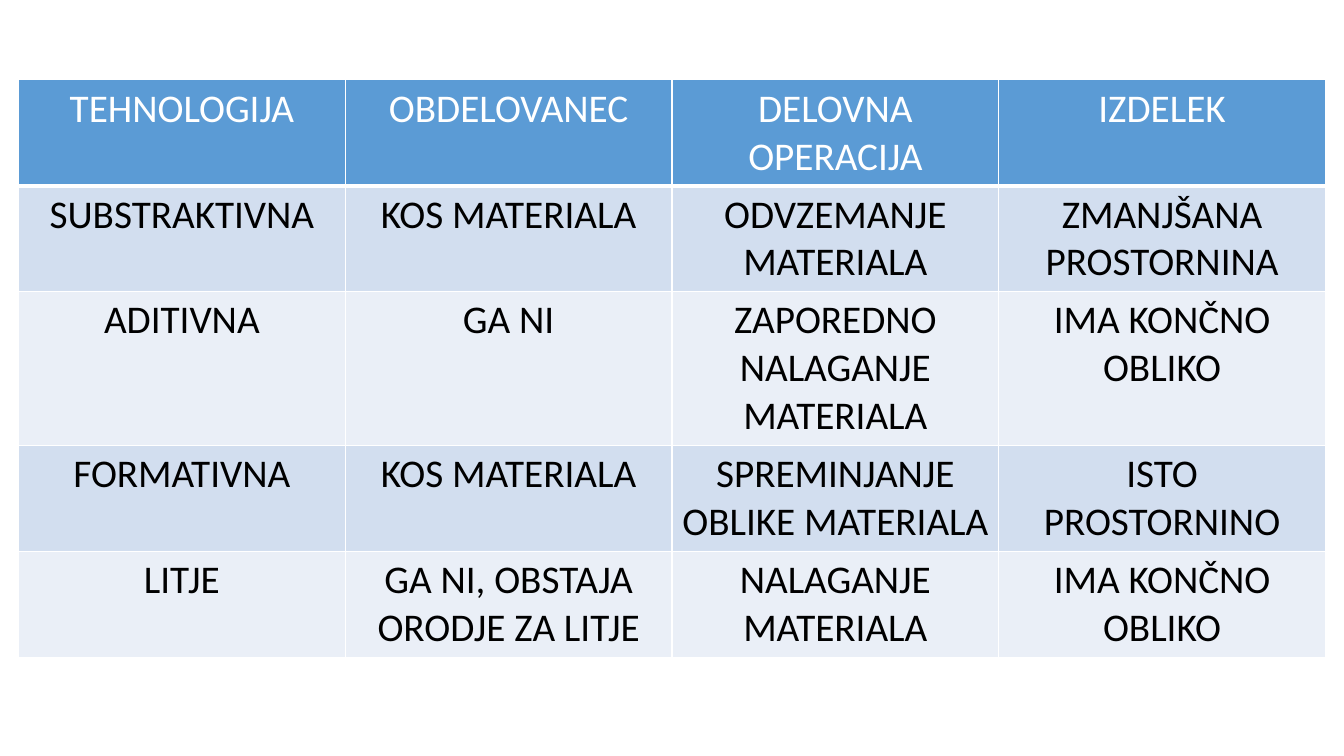
from lxml.etree import SubElement
from pptx import Presentation
from pptx.dml.color import RGBColor
from pptx.enum.text import PP_ALIGN
from pptx.oxml.ns import qn
from pptx.util import Pt

WHITE = RGBColor(0xFF, 0xFF, 0xFF)
BLACK = RGBColor(0x00, 0x00, 0x00)
HEADER_BLUE = RGBColor(0x5B, 0x9B, 0xD5)
BANDS = (RGBColor(0xD2, 0xDE, 0xEF), RGBColor(0xEA, 0xEF, 0xF7))

TECHNOLOGIES = [
    ("TEHNOLOGIJA", "OBDELOVANEC", "DELOVNA OPERACIJA", "IZDELEK"),
    ("SUBSTRAKTIVNA", "KOS MATERIALA", "ODVZEMANJE MATERIALA", "ZMANJŠANA PROSTORNINA"),
    ("ADITIVNA", "GA NI", "ZAPOREDNO NALAGANJE MATERIALA", "IMA KONČNO OBLIKO"),
    ("FORMATIVNA", "KOS MATERIALA", "SPREMINJANJE OBLIKE MATERIALA", "ISTO PROSTORNINO"),
    ("LITJE", "GA NI, OBSTAJA ORODJE ZA LITJE", "NALAGANJE MATERIALA", "IMA KONČNO OBLIKO"),
]
ROW_HEIGHTS = (75.5, 75.5, 109.7, 75.5, 75.5)


def add_borders(cell, widths):
    """Draw white borders; widths maps an edge letter (L, R, T, B) to points."""
    properties = cell._tc.get_or_add_tcPr()
    for position, (edge, width) in enumerate(widths.items()):
        border = properties.makeelement(qn(f"a:ln{edge}"), {"w": str(Pt(width))})
        fill = SubElement(border, qn("a:solidFill"))
        SubElement(fill, qn("a:srgbClr"), val=str(WHITE))
        properties.insert(position, border)


def fill_cell(cell, wording, fill, color, borders):
    cell.fill.solid()
    cell.fill.fore_color.rgb = fill
    cell.text = wording
    paragraph = cell.text_frame.paragraphs[0]
    paragraph.alignment = PP_ALIGN.CENTER
    font = paragraph.runs[0].font
    for name, value in {"name": "Calibri", "size": Pt(28), "bold": False}.items():
        setattr(font, name, value)
    font.color.rgb = color
    add_borders(cell, borders)


def add_technology_table(slide, left, top, width):
    column_count = len(TECHNOLOGIES[0])
    table = slide.shapes.add_table(
        len(TECHNOLOGIES), column_count,
        Pt(left), Pt(top), Pt(width), Pt(sum(ROW_HEIGHTS)),
    ).table
    for column in table.columns:
        column.width = Pt(width / column_count)
    for row, height in zip(table.rows, ROW_HEIGHTS):
        row.height = Pt(height)
    for r, technology in enumerate(TECHNOLOGIES):
        fill, color = (BANDS[(r - 1) % 2], BLACK) if r else (HEADER_BLUE, WHITE)
        borders = {"L": 1, "R": 1, "T": 3 if r == 1 else 1, "B": 1 if r else 3}
        for c, wording in enumerate(technology):
            fill_cell(table.cell(r, c), wording, fill, color, borders)


def main():
    presentation = Presentation()
    presentation.slide_width = Pt(960)
    presentation.slide_height = Pt(540)
    slide = presentation.slides.add_slide(presentation.slide_layouts[6])
    add_technology_table(slide, left=13.2, top=57, width=933.6)
    presentation.save("out.pptx")


if __name__ == "__main__":
    main()
